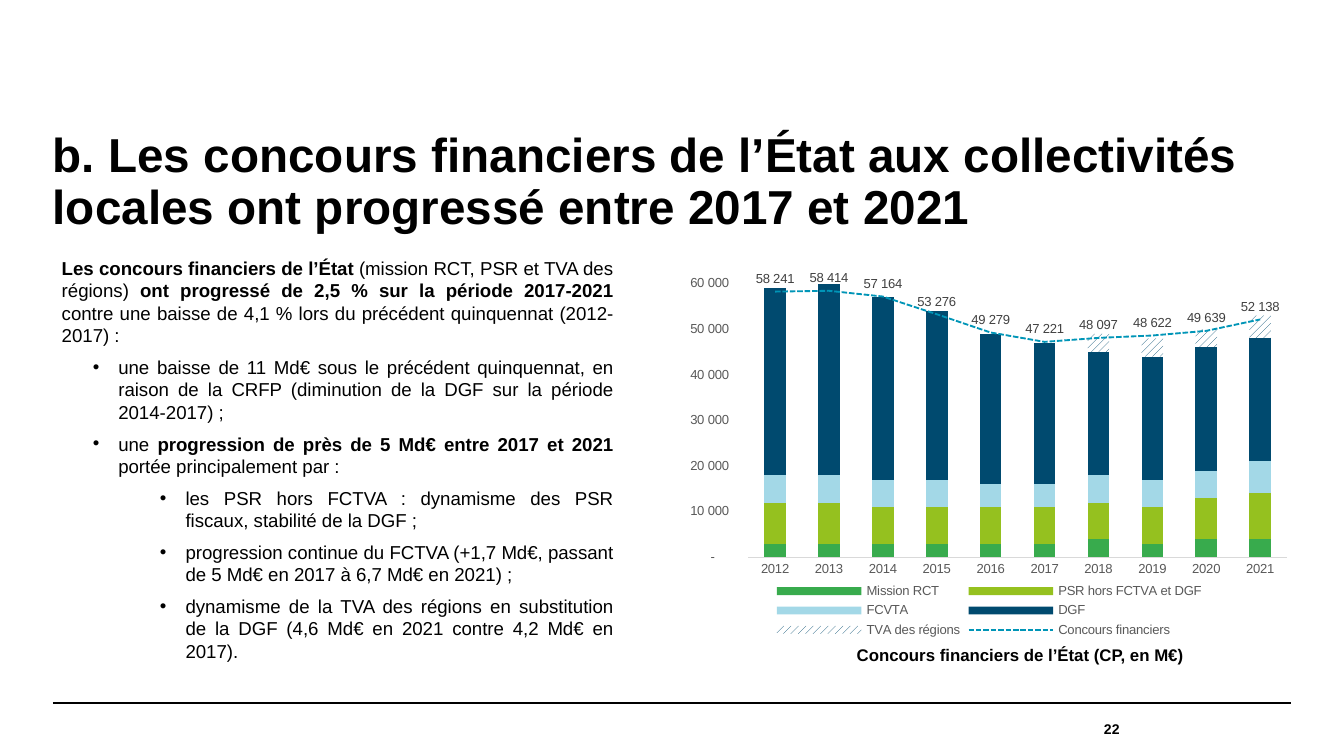
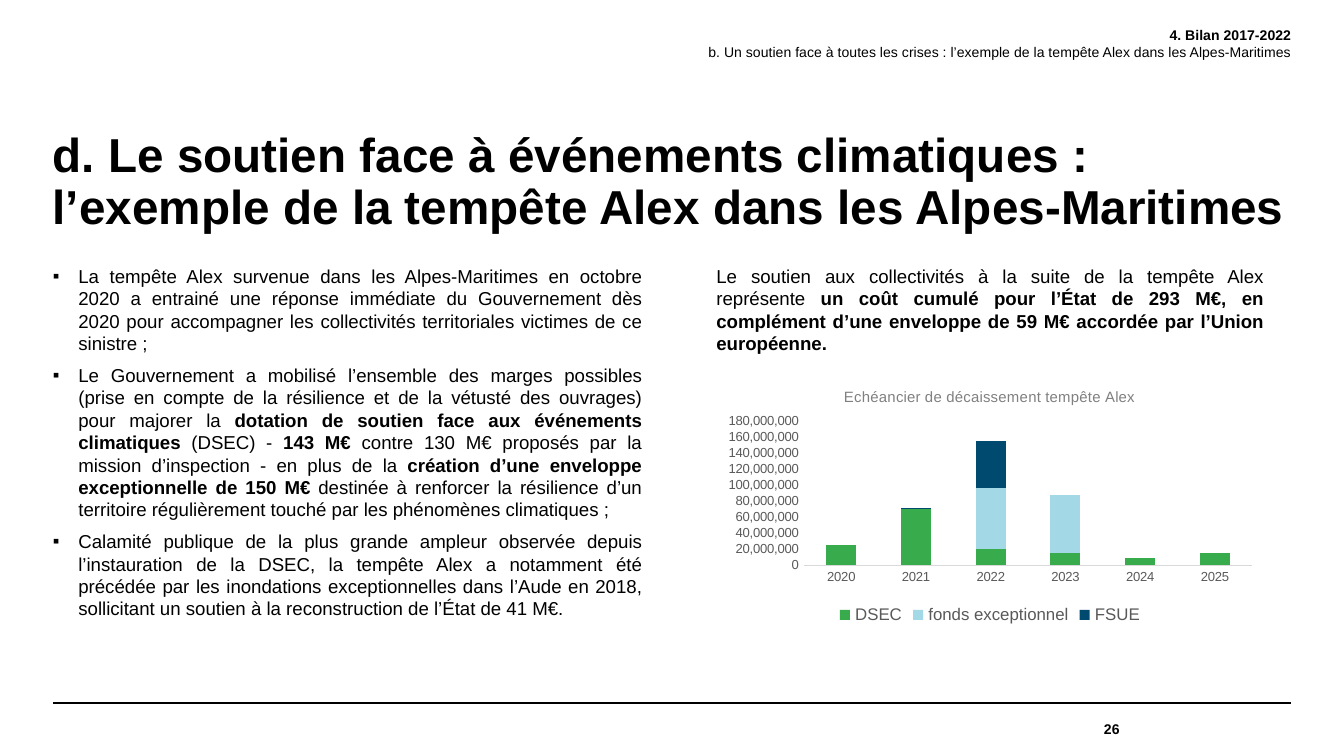
from dataclasses import dataclass

from lxml.etree import SubElement
from pptx import Presentation
from pptx.chart.data import CategoryChartData
from pptx.dml.color import RGBColor as RGB
from pptx.enum.chart import XL_CHART_TYPE as CHART
from pptx.enum.chart import XL_LABEL_POSITION as LABEL_POS
from pptx.enum.chart import XL_LEGEND_POSITION as LEGEND_POS
from pptx.enum.chart import XL_MARKER_STYLE as MARKER
from pptx.enum.chart import XL_TICK_MARK as TICK
from pptx.enum.dml import MSO_LINE, MSO_PATTERN
from pptx.enum.shapes import MSO_CONNECTOR
from pptx.enum.text import MSO_ANCHOR as ANCHOR
from pptx.enum.text import PP_ALIGN as ALIGN
from pptx.oxml import parse_xml
from pptx.oxml.ns import nsdecls, qn
from pptx.util import Pt


@dataclass(frozen=True)
class Theme:
    font: str = "Arial"
    black: RGB = RGB(0x00, 0x00, 0x00)
    white: RGB = RGB(0xFF, 0xFF, 0xFF)
    axis_text: RGB = RGB(0x59, 0x59, 0x59)
    axis_line: RGB = RGB(0xD9, 0xD9, 0xD9)
    label_text: RGB = RGB(0x40, 0x40, 0x40)
    chart_title: RGB = RGB(0x80, 0x80, 0x80)
    green: RGB = RGB(0x38, 0xAB, 0x4D)
    lime: RGB = RGB(0x95, 0xC1, 0x1F)
    sky: RGB = RGB(0xA3, 0xD8, 0xE7)
    navy: RGB = RGB(0x00, 0x4A, 0x6F)
    teal: RGB = RGB(0x00, 0x95, 0xB7)
    title_size: float = 25.5
    body_size: float = 10
    caption_size: float = 9
    chart_title_size: float = 8
    small_size: float = 7.5
    axis_size: float = 7


T = Theme()
LEFT, RIGHT = 28.3, 691.7
FOOTER_TOP = 376.6

# Paragraph styles: level, left margin, first-line indent, bullet
PLAIN = (0, 0, 0, None)
INTRO = (1, 0.7, 0, None)
BULLET = (1, 31, -13.7, "•")
SUB_BULLET = (2, 67, -13.7, "•")
SQUARE = (0, 13.7, -13.7, "▪")


def add_text(s, box, paragraphs, size, align=ALIGN.LEFT, anchor=ANCHOR.TOP,
             inset=(0, 0), after=0, spacing=None):
    """Add a text box from (style, [(text, bold), ...]) paragraphs."""
    tf = s.shapes.add_textbox(*map(Pt, box)).text_frame
    tf.word_wrap = True
    tf.vertical_anchor = anchor
    tf.margin_left = tf.margin_right = Pt(inset[0])
    tf.margin_top = tf.margin_bottom = Pt(inset[1])
    for i, ((level, margin, indent, bullet), runs) in enumerate(paragraphs):
        p = tf.add_paragraph() if i else tf.paragraphs[0]
        p.alignment, p.level = align, level
        p.space_after = Pt(after)
        if spacing:
            p.line_spacing = spacing
        pPr = p._p.get_or_add_pPr()
        pPr.set("marL", str(Pt(margin)))
        pPr.set("indent", str(Pt(indent)))
        if bullet:
            SubElement(pPr, qn("a:buFont")).set("typeface", T.font)
            SubElement(pPr, qn("a:buChar")).set("char", bullet)
        for text, bold in runs:
            r = p.add_run()
            r.text = text
            r.font.name, r.font.size, r.font.bold = T.font, Pt(size), bold
            r.font.color.rgb = T.black


def add_stacked_chart(s, box, plot_box, cats, series, top, step, num_format, legend_size):
    """Add stacked columns from (name, colour, values) series; plot_box is in chart fractions."""
    data = CategoryChartData()
    data.categories = cats
    for name, _, values in series:
        data.add_series(name, values)
    chart = s.shapes.add_chart(CHART.COLUMN_STACKED, *map(Pt, box), data).chart
    chart.has_title = False
    chart.font.name, chart.font.size = T.font, Pt(T.body_size)
    chart.font.color.rgb = T.black
    chart.has_legend = True
    chart.legend.position = LEGEND_POS.BOTTOM
    chart.legend.include_in_layout = False
    cat_axis, val_axis = chart.category_axis, chart.value_axis
    for font, size in ((chart.legend.font, legend_size),
                       (cat_axis.tick_labels.font, T.axis_size),
                       (val_axis.tick_labels.font, T.axis_size)):
        font.name, font.size = T.font, Pt(size)
        font.color.rgb = T.axis_text
    for axis in (cat_axis, val_axis):
        axis.has_major_gridlines = False
        axis.major_tick_mark = axis.minor_tick_mark = TICK.NONE
    cat_axis.format.line.color.rgb = T.axis_line
    cat_axis.format.line.width = Pt(0.75)
    val_axis.format.line.fill.background()
    val_axis.minimum_scale, val_axis.maximum_scale = 0, top
    val_axis.major_unit = step
    val_axis.tick_labels.number_format = num_format
    val_axis.tick_labels.number_format_is_linked = False

    plot = chart.plots[0]
    plot.vary_by_categories = False
    plot.gap_width, plot.overlap = 150, 100
    for ser, (_, color, _) in zip(plot.series, series):
        ser.format.fill.solid()
        ser.format.fill.fore_color.rgb = color

    area = chart._chartSpace.chart.plotArea
    for layout in area.findall(qn("c:layout")):
        area.remove(layout)
    layout = SubElement(area, qn("c:layout"))
    area.insert(0, layout)
    manual = SubElement(layout, qn("c:manualLayout"))
    settings = [("layoutTarget", "inner"), ("xMode", "edge"), ("yMode", "edge")]
    for tag, value in settings + list(zip("xywh", plot_box)):
        SubElement(manual, qn(f"c:{tag}")).set("val", str(value))
    return chart


prs = Presentation()
prs.slide_width, prs.slide_height = Pt(720), Pt(405)

# Shared title, footer rule and page number
slides = []
for title, number in (
    ("b. Les concours financiers de l’État aux collectivités locales ont progressé "
     "entre 2017 et 2021", "22"),
    ("d. Le soutien face à événements climatiques : l’exemple de la tempête Alex "
     "dans les Alpes-Maritimes", "26"),
):
    s = prs.slides.add_slide(prs.slide_layouts[6])
    rule = s.shapes.add_connector(MSO_CONNECTOR.STRAIGHT, Pt(LEFT), Pt(FOOTER_TOP),
                                  Pt(RIGHT), Pt(FOOTER_TOP))
    rule.line.color.rgb = T.black
    rule.line.width = Pt(0.79)
    SubElement(rule.element.spPr, qn("a:effectLst"))
    add_text(s, (LEFT, 70.6, RIGHT - LEFT, 29.5), [(PLAIN, [(title, True)])],
             T.title_size, spacing=0.9)
    add_text(s, (493.2, FOOTER_TOP, 106.6, 28.2), [(PLAIN, [(number, True)])],
             T.small_size, ALIGN.RIGHT, ANCHOR.MIDDLE)
    slides.append(s)
funding, storm = slides

# Slide 1: State funding
add_text(funding, (32.4, 137.5, 296, 202.3), [
    (INTRO, [
        ("Les concours financiers de l’État ", True),
        ("(mission RCT, PSR et TVA des régions) ", False),
        ("ont progressé de 2,5 % sur la période 2017-2021", True),
        (" contre une baisse de 4,1 % lors du précédent quinquennat (2012-2017) :", False)]),
    (BULLET, [
        ("une baisse de 11 Md€ sous le précédent quinquennat, en raison de la CRFP "
         "(diminution de la DGF sur la période 2014-2017) ;", False)]),
    (BULLET, [
        ("une ", False),
        ("progression de près de 5 Md€ entre 2017 et 2021 ", True),
        ("portée principalement par :", False)]),
    (SUB_BULLET, [
        ("les PSR hors FCTVA : dynamisme des PSR fiscaux, stabilité de la DGF ;", False)]),
    (SUB_BULLET, [
        ("progression continue du FCTVA (+1,7 Md€, passant de 5 Md€ en 2017 "
         "à 6,7 Md€ en 2021) ;", False)]),
    (SUB_BULLET, [
        ("dynamisme de la TVA des régions en substitution de la DGF "
         "(4,6 Md€ en 2021 contre 4,2 Md€ en 2017).", False)]),
], T.body_size, ALIGN.JUSTIFY, after=5)

chart = add_stacked_chart(
    funding, (360, 137.5, 339.8, 206.6), (0.12, 0.07, 0.85, 0.71),
    [str(year) for year in range(2012, 2022)],
    [
        ("Mission RCT", T.green,
         [3000, 3000, 3000, 3000, 3000, 3000, 4000, 3000, 4000, 4000]),
        ("PSR hors FCTVA et DGF", T.lime,
         [9000, 9000, 8000, 8000, 8000, 8000, 8000, 8000, 9000, 10000]),
        ("FCVTA", T.sky,
         [6000, 6000, 6000, 6000, 5000, 5000, 6000, 6000, 6000, 7000]),
        ("DGF", T.navy,
         [41000, 42000, 40000, 37000, 33000, 31000, 27000, 27000, 27000, 27000]),
        ("TVA des régions", T.navy, [None] * 6 + [4000, 4000, 4000, 5000]),
        ("Concours financiers", T.teal,
         [58241, 58414, 57164, 53276, 49279, 47221, 48097, 48622, 49639, 52138]),
    ],
    60000, 10000,
    r'_-* #\ ##0\ _€_-;\-* #\ ##0\ _€_-;_-* "-"??\ _€_-;_-@_-', T.axis_size)

hatch = chart.plots[0].series[4].format.fill
hatch.patterned()
hatch.pattern = MSO_PATTERN.WIDE_UPWARD_DIAGONAL
hatch.fore_color.rgb, hatch.back_color.rgb = T.navy, T.white

# The total moves from the columns to a line plot on the same axes
bars = chart._chartSpace.chart.plotArea.find(qn("c:barChart"))
total = bars.findall(qn("c:ser"))[-1]
for tag in ("c:invertIfNegative", "c:spPr"):
    for child in total.findall(qn(tag)):
        total.remove(child)
line_plot = parse_xml(
    f'<c:lineChart {nsdecls("c")}><c:grouping val="standard"/><c:varyColors val="0"/>'
    '<c:marker val="1"/></c:lineChart>')
line_plot.insert(2, total)
for axis_id in bars.findall(qn("c:axId")):
    SubElement(line_plot, qn("c:axId")).set("val", axis_id.get("val"))
bars.addnext(line_plot)

total = chart.plots[1].series[0]
total.smooth = False
total.marker.style = MARKER.NONE
total.format.line.color.rgb = T.teal
total.format.line.width = Pt(1)
total.format.line.dash_style = MSO_LINE.SQUARE_DOT
labels = total.data_labels
labels.show_value = True
labels.position = LABEL_POS.ABOVE
labels.number_format, labels.number_format_is_linked = r"#\ ##0", False
labels.font.name, labels.font.size = T.font, Pt(T.axis_size)
labels.font.color.rgb = T.label_text

add_text(funding, (415.4, 342, 262, 18),
         [(PLAIN, [("Concours financiers de l’État (CP, en M€)", True)])],
         T.caption_size, ALIGN.CENTER, inset=(7.2, 3.6))

# Slide 2: storm Alex
add_text(storm, (260.6, 14.4, RIGHT - 260.6, 28.1), [
    (PLAIN, [("4. Bilan 2017-2022", True)]),
    (PLAIN, [("b. Un soutien face à toutes les crises : l’exemple de la tempête Alex "
              "dans les Alpes-Maritimes", False)]),
], T.small_size, ALIGN.RIGHT)

add_text(storm, (383.8, 141.8, 293, 206.6), [
    (PLAIN, [
        ("Le soutien aux collectivités à la suite de la tempête Alex représente ", False),
        ("un coût cumulé pour l’État de 293 M€, en complément d’une enveloppe de 59 M€ "
         "accordée par l’Union européenne.", True)]),
], T.body_size, ALIGN.JUSTIFY, after=5)

add_text(storm, (LEFT, 141.8, 315.4, 206.6), [
    (SQUARE, [
        ("La tempête Alex survenue dans les Alpes-Maritimes en octobre 2020 a entrainé une "
         "réponse immédiate du Gouvernement dès 2020 pour accompagner les collectivités "
         "territoriales victimes de ce sinistre ;", False)]),
    (SQUARE, [
        ("Le Gouvernement a mobilisé l’ensemble des marges possibles (prise en compte de la "
         "résilience et de la vétusté des ouvrages) pour majorer la ", False),
        ("dotation de soutien face aux événements climatiques ", True),
        ("(DSEC) - ", False),
        ("143 M€ ", True),
        ("contre 130 M€ proposés par la mission d’inspection - en plus de la ", False),
        ("création d’une enveloppe exceptionnelle de 150 M€ ", True),
        ("destinée à renforcer la résilience d’un territoire régulièrement touché par les "
         "phénomènes climatiques ;", False)]),
    (SQUARE, [
        ("Calamité publique de la plus grande ampleur observée depuis l’instauration de la "
         "DSEC, la tempête Alex a notamment été précédée par les inondations exceptionnelles "
         "dans l’Aude en 2018, sollicitant un soutien à la reconstruction de l’État "
         "de 41 M€.", False)]),
], T.body_size, ALIGN.JUSTIFY, after=5)

chart = add_stacked_chart(
    storm, (383.8, 199.4, 293, 138.2), (0.16, 0.19, 0.82, 0.56),
    [str(year) for year in range(2020, 2026)],
    [
        ("DSEC", T.green, [26000000, 70000000, 20000000, 15000000, 9000000, 15000000]),
        ("fonds exceptionnel", T.sky, [0, 0, 77000000, 73000000, 0, 0]),
        ("FSUE", T.navy, [0, 1000000, 58000000, 0, 0, 0]),
    ],
    180000000, 20000000, "#,##0", T.caption_size)
chart.has_title = True
r = chart.chart_title.text_frame.paragraphs[0].add_run()
r.text = "Echéancier de décaissement tempête Alex"
r.font.name, r.font.size, r.font.bold = T.font, Pt(T.chart_title_size), False
r.font.color.rgb = T.chart_title
chart._chartSpace.xpath("c:chart/c:title/c:overlay")[0].set("val", "1")

prs.save("out.pptx")
